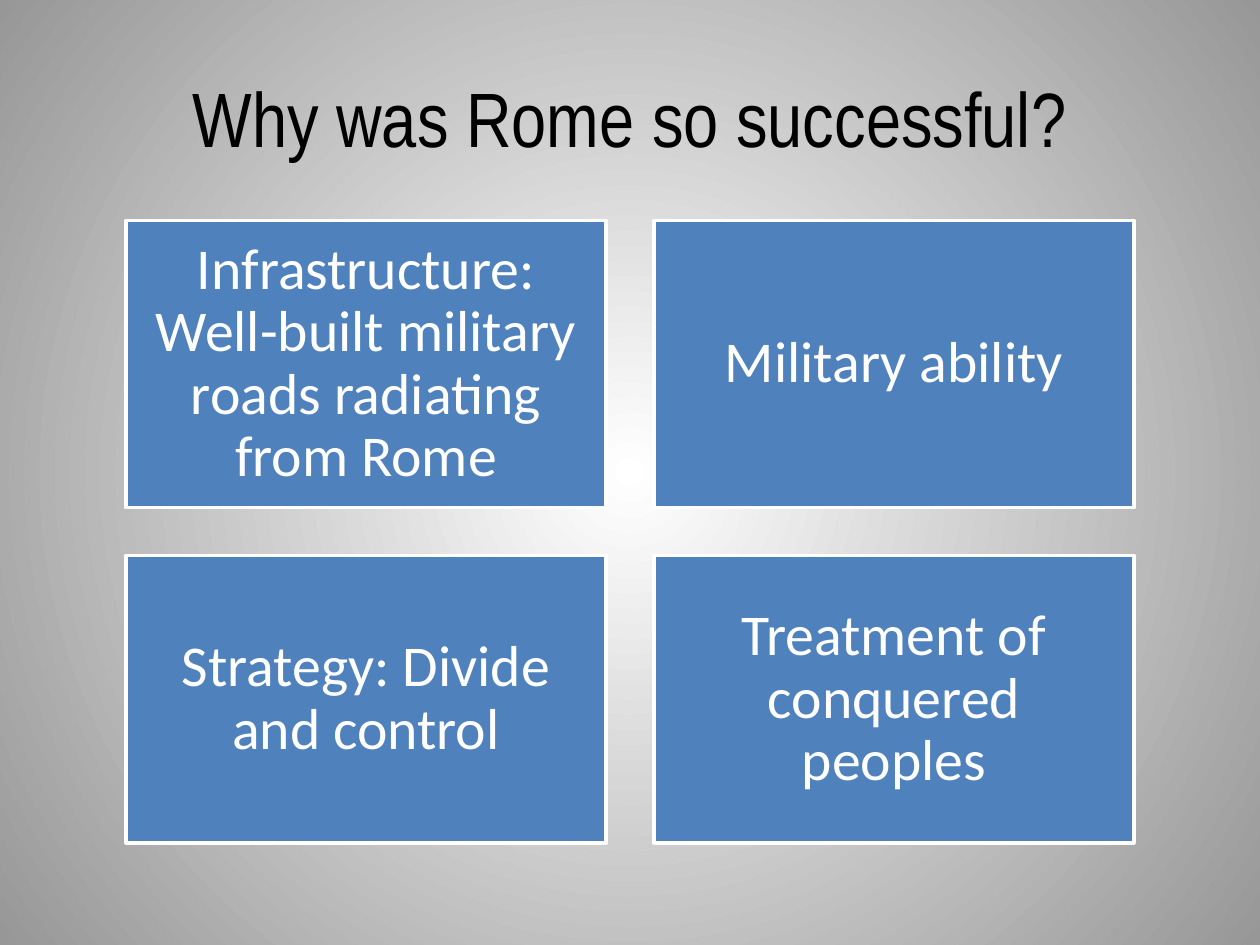
from lxml import etree
from pptx import Presentation
from pptx.dml.color import RGBColor
from pptx.enum.shapes import MSO_SHAPE
from pptx.enum.text import MSO_ANCHOR, PP_ALIGN
from pptx.oxml import parse_xml
from pptx.oxml.ns import nsdecls, qn
from pptx.util import Inches, Pt

BLACK = RGBColor(0x00, 0x00, 0x00)
WHITE = RGBColor(0xFF, 0xFF, 0xFF)
GRAY = RGBColor(0x97, 0x97, 0x97)
BLUE = RGBColor(0x4F, 0x81, 0xBD)

TITLE = "Why was Rome so successful?"
REASONS = [
    "Infrastructure: Well-built military roads radiating from Rome",
    "Military ability",
    "Strategy: Divide and control",
    "Treatment of conquered peoples",
]
COLUMNS = 2


def set_text(tf, text, *, font, size, color, spacing=None, inset=None):
    tf.word_wrap = True
    tf.vertical_anchor = MSO_ANCHOR.MIDDLE
    if inset is not None:
        tf.margin_left = tf.margin_right = Inches(inset)
        tf.margin_top = tf.margin_bottom = Inches(inset)
    p = tf.paragraphs[0]
    p.alignment = PP_ALIGN.CENTER
    if spacing is not None:
        p.line_spacing = spacing
    r = p.add_run()
    r.text = text
    r.font.name = font
    r.font.size = Pt(size)
    r.font.color.rgb = color


class ReasonSlide:
    left, top = 1, 1.75
    card_width, card_height = 3.81, 2.28
    gap = 0.38

    def __init__(self, prs):
        self.s = prs.slides.add_slide(prs.slide_layouts[5])

    def background(self, center, edge):
        """Fill the slide with a gradient that spreads in circles."""
        fill = self.s.background.fill
        fill.gradient()
        for stop, color, position in zip(fill.gradient_stops, (center, edge), (0, 1)):
            stop.color.rgb = color
            stop.position = position
        grad = self.s.background._cSld.find(".//" + qn("a:gradFill"))
        circle = parse_xml(f'<a:path {nsdecls("a")} path="circle"/>')
        etree.SubElement(circle, qn("a:fillToRect"),
                         dict.fromkeys("ltrb", "50000"))
        grad.replace(grad.find(qn("a:lin")), circle)

    def title(self, text):
        sp = self.s.shapes.title
        sp.left, sp.top = Inches(0.5), Inches(0.3)
        sp.width, sp.height = Inches(9), Inches(1.25)
        set_text(sp.text_frame, text, font="Arial Narrow", size=44, color=BLACK)

    def card(self, col, row, text):
        sp = self.s.shapes.add_shape(
            MSO_SHAPE.RECTANGLE,
            Inches(self.left + col * (self.card_width + self.gap)),
            Inches(self.top + row * (self.card_height + self.gap)),
            Inches(self.card_width), Inches(self.card_height))
        sp.shadow.inherit = False
        sp.fill.solid()
        sp.fill.fore_color.rgb = BLUE
        sp.line.color.rgb = WHITE
        sp.line.width = Pt(2)
        set_text(sp.text_frame, text, font="Calibri", size=33, color=WHITE,
                 spacing=0.9, inset=0.14)


def main():
    prs = Presentation()
    prs.slide_width, prs.slide_height = Inches(10), Inches(7.5)
    slide = ReasonSlide(prs)
    slide.background(WHITE, GRAY)
    slide.title(TITLE)
    for i, reason in enumerate(REASONS):
        row, col = divmod(i, COLUMNS)
        slide.card(col, row, reason)
    prs.save("out.pptx")


if __name__ == "__main__":
    main()
